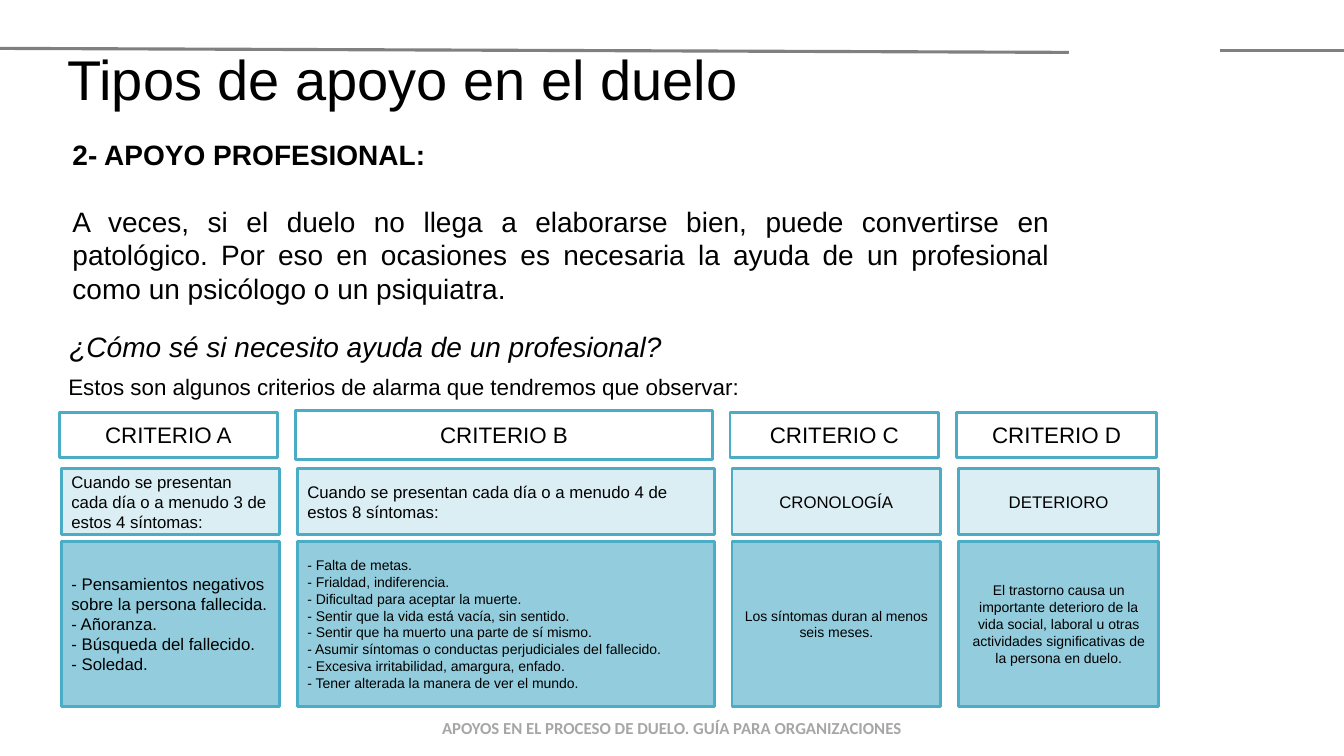
from dataclasses import dataclass
from lxml import etree
from pptx import Presentation
from pptx.dml.color import RGBColor as RGB
from pptx.enum.shapes import MSO_CONNECTOR as LINK, MSO_SHAPE as SHAPE
from pptx.enum.text import MSO_ANCHOR as ANCHOR, PP_ALIGN as ALIGN
from pptx.oxml.ns import qn
from pptx.util import Inches, Pt


@dataclass(frozen=True)
class Theme:
    """Colours, fonts and type sizes of the slide."""
    font: str = "Arial"
    foot_font: str = "Calibri"
    ink: str = "000000"
    rule: str = "808080"
    foot: str = "A6A6A6"
    edge: str = "4BACC6"
    head: str = "FFFFFF"
    pale: str = "DBEEF4"
    deep: str = "93CDDD"
    title: int = 40
    body: int = 20
    label: int = 16
    note: int = 12
    small: int = 10


THEME = Theme()

COLUMNS = [
    (0.59, 2.16, 0, "CRITERIO A",
     "Cuando se presentan cada día o a menudo 3 de estos 4 síntomas:", ALIGN.LEFT,
     ["- Pensamientos negativos sobre la persona fallecida.", "- Añoranza.",
      "- Búsqueda del fallecido.", "- Soledad."], THEME.note),
    (2.93, 4.14, 0.02, "CRITERIO B",
     "Cuando se presentan cada día o a menudo 4 de estos 8 síntomas:", ALIGN.LEFT,
     ["- Falta de metas.", "- Frialdad, indiferencia.",
      "- Dificultad para aceptar la muerte.",
      "- Sentir que la vida está vacía, sin sentido.",
      "- Sentir que ha muerto una parte de sí mismo.",
      "- Asumir síntomas o conductas perjudiciales del fallecido.",
      "- Excesiva irritabilidad, amargura, enfado.",
      "- Tener alterada la manera de ver el mundo."], THEME.small),
    (7.24, 2.07, 0, "CRITERIO C", "CRONOLOGÍA", ALIGN.CENTER,
     ["Los síntomas duran al menos seis meses."], THEME.small),
    (9.49, 1.98, 0, "CRITERIO D", "DETERIORO", ALIGN.CENTER,
     ["El trastorno causa un importante deterioro de la vida social, laboral u otras "
      "actividades significativas de la persona en duelo."], THEME.small),
]


def write(frame, lines, size, align=ALIGN.LEFT, color=THEME.ink, font=THEME.font):
    """Fill a text frame with one paragraph per line."""
    frame.word_wrap = True
    frame.text = "\n".join(lines)
    for para in frame.paragraphs:
        para.alignment = align
        for run in para.runs:
            run.font.size = Pt(size)
            run.font.name = font
            run.font.color.rgb = RGB.from_string(color)
    return frame


def add_text(slide, area, lines, size, **style):
    """Add a text box and return its frame."""
    box = slide.shapes.add_textbox(*map(Inches, area))
    return write(box.text_frame, lines, size, **style)


def add_box(slide, area, fill, lines, size, align):
    """Add an outlined box with text centred in height."""
    box = slide.shapes.add_shape(SHAPE.RECTANGLE, *map(Inches, area))
    box.shadow.inherit = False
    box.fill.solid()
    box.fill.fore_color.rgb = RGB.from_string(fill)
    box.line.color.rgb = RGB.from_string(THEME.edge)
    box.line.width = Pt(2)
    write(box.text_frame, lines, size, align).vertical_anchor = ANCHOR.MIDDLE


def add_rule(slide, *ends):
    """Add a grey line between two points."""
    rule = slide.shapes.add_connector(LINK.STRAIGHT, *map(Inches, ends))
    rule.line.color.rgb = RGB.from_string(THEME.rule)
    rule.line.width = Pt(2.25)
    etree.SubElement(rule._element.spPr, qn("a:effectLst"))


def add_column(slide, left, width, grow, head, lead, align, items, size):
    """Add the three stacked boxes of one criterion."""
    inner = left + 0.02
    add_box(slide, (left, 4.09 - grow, width, 0.45 + 2 * grow), THEME.head,
            [head], THEME.label, ALIGN.CENTER)
    add_box(slide, (inner, 4.65, width, 0.65), THEME.pale, [lead], THEME.note, align)
    add_box(slide, (inner, 5.37, width, 1.64), THEME.deep, items, size, align)


def main():
    """Build and save the slide."""
    deck = Presentation()
    deck.slide_width, deck.slide_height = Inches(13.33), Inches(7.5)
    slide = deck.slides.add_slide(deck.slide_layouts[6])

    add_rule(slide, 0, 0.48, 10.6, 0.52)
    add_rule(slide, 12.1, 0.5, 13.33, 0.5)
    foot = add_text(slide, (0, 7.07, 13.33, 0.3),
                    ["APOYOS EN EL PROCESO DE DUELO. GUÍA PARA ORGANIZACIONES"],
                    THEME.note, align=ALIGN.CENTER, color=THEME.foot, font=THEME.foot_font)
    foot.paragraphs[0].runs[0].font.bold = True

    title = add_text(slide, (0.57, 0.31, 9, 0.93), ["Tipos de apoyo en el duelo"], THEME.title)
    title.vertical_anchor = ANCHOR.MIDDLE

    body = add_text(slide, (0.62, 1.31, 9.89, 1.78), [
        "2- APOYO PROFESIONAL:",
        "A veces, si el duelo no llega a elaborarse bien, puede convertirse en patológico. "
        "Por eso en ocasiones es necesaria la ayuda de un profesional como un psicólogo "
        "o un psiquiatra."], THEME.body)
    lead, text = body.paragraphs
    lead.runs[0].font.bold = True
    text.alignment = ALIGN.JUSTIFY
    text.space_before = Pt(24)

    ask = add_text(slide, (0.59, 3.22, 6.3, 0.44),
                   ["¿Cómo sé si necesito ayuda de un profesional?"], THEME.body)
    ask.paragraphs[0].runs[0].font.italic = True
    add_text(slide, (0.58, 3.65, 8.87, 0.37),
             ["Estos son algunos criterios de alarma que tendremos que observar:"], THEME.label)

    for column in COLUMNS:
        add_column(slide, *column)
    deck.save("out.pptx")


if __name__ == "__main__":
    main()
